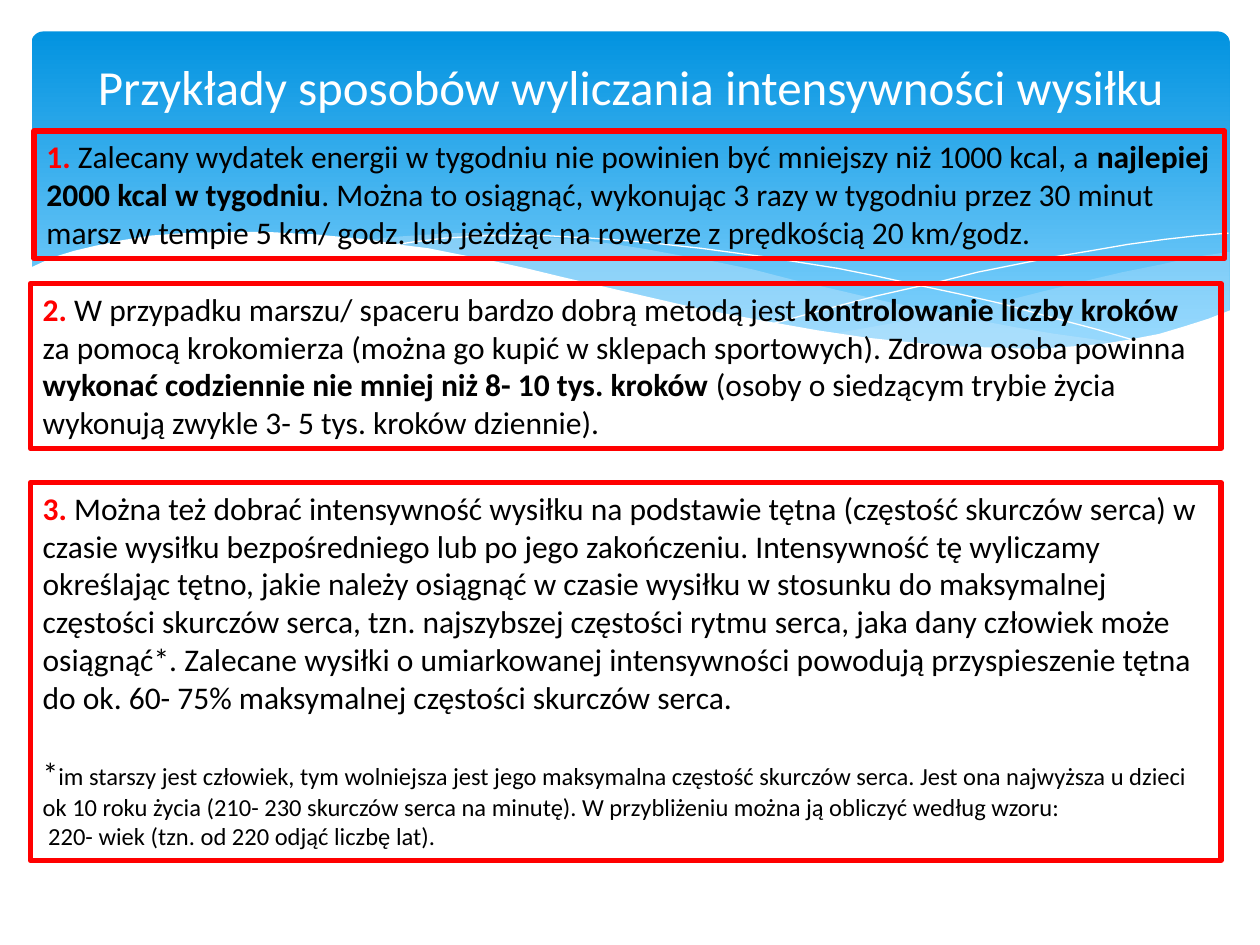
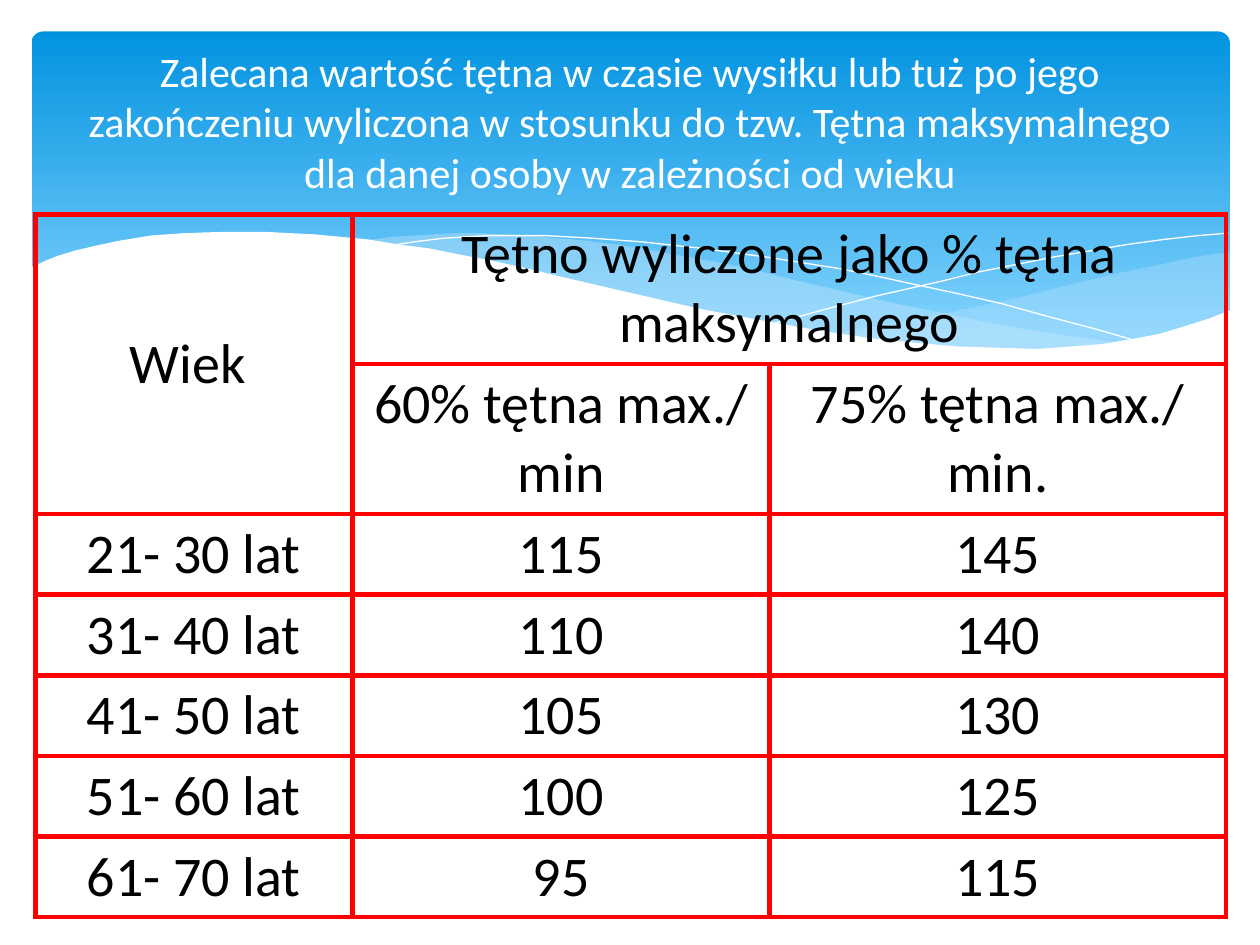
from lxml import etree
from pptx import Presentation
from pptx.dml.color import RGBColor
from pptx.enum.shapes import MSO_SHAPE
from pptx.enum.text import MSO_ANCHOR, PP_ALIGN
from pptx.oxml.ns import qn
from pptx.util import Inches, Pt

ROUND = MSO_SHAPE.ROUNDED_RECTANGLE
MIDDLE = MSO_ANCHOR.MIDDLE
CENTER = PP_ALIGN.CENTER
BLUE = RGBColor(0x02, 0x93, 0xE0)
SKY = RGBColor(0x83, 0xD3, 0xFE)
PALE = RGBColor(0xC6, 0xE7, 0xFC)
WHITE = RGBColor(0xFF, 0xFF, 0xFF)
BLACK = RGBColor(0, 0, 0)
RED = RGBColor(0xFF, 0, 0)
FONT = "Calibri"
BORDER = Pt(3)
EDGE = 0.28    # left edge of the content
WIDE = 9.45    # width of the content

# Wave outlines, in hundredths of an inch
SWELL = [
    (975, 200), (948, 204), (921, 210), (891, 216), (861, 223), (805, 237),
    (753, 248), (706, 257), (661, 265), (691, 269), (719, 272), (745, 275),
    (781, 277), (814, 278), (844, 277), (872, 274), (897, 270), (921, 265),
    (942, 259), (963, 252), (976, 247), (976, 200)]
RIPPLE = [
    (893, 273), (866, 269), (837, 265), (807, 260), (775, 254), (741, 247),
    (706, 240), (668, 231), (629, 222), (598, 214), (569, 208), (541, 203),
    (514, 198), (489, 194), (465, 191), (442, 189), (420, 187), (399, 186),
    (380, 185), (361, 185), (344, 186), (313, 188), (286, 191), (323, 196),
    (362, 203), (404, 211), (449, 222), (491, 232), (530, 240), (566, 248),
    (601, 255), (634, 261), (665, 266), (695, 270), (722, 274), (748, 276),
    (773, 277), (796, 278), (828, 278), (857, 277), (876, 275)]
FALL = [
    (309, 195), (328, 192), (353, 189), (387, 187), (433, 187), (469, 189),
    (510, 192), (556, 197), (608, 204), (665, 213), (695, 219), (727, 226),
    (760, 233), (795, 241), (831, 251), (869, 261), (907, 272)]
RISE = [
    (613, 257), (653, 246), (695, 235), (748, 223), (776, 216), (806, 210),
    (836, 204), (866, 199), (895, 194), (924, 190), (951, 187), (975, 185)]
SHORE = [
    (977, 246), (959, 253), (940, 259), (920, 265), (899, 269), (875, 273),
    (850, 275), (823, 277), (793, 276), (761, 275), (726, 272), (688, 268),
    (648, 262), (603, 254), (555, 245), (503, 233), (447, 220), (418, 213),
    (391, 207), (365, 202), (340, 197), (316, 194), (292, 190), (271, 188),
    (250, 186), (230, 185), (211, 184), (177, 184), (146, 185), (119, 187),
    (95, 191), (76, 195), (59, 199), (46, 203), (36, 207), (23, 213),
    (23, 329), (977, 329)]
WAVES = [(SWELL, PALE, 29), (RIPPLE, PALE, 40), (FALL, None, 100),
         (RISE, None, 100), (SHORE, WHITE, 100)]

TITLES = [
    ("Przykłady sposobów wyliczania intensywności wysiłku", 28,
     (EDGE, 0.37, WIDE, 0.62)),
    ("Zalecana wartość tętna w czasie wysiłku lub tuż po jego zakończeniu "
     "wyliczona w stosunku do tzw. Tętna maksymalnego dla danej osoby "
     "w zależności od wieku", 24, (0.5, 0.37, 9, 1.18)),
]

# Each box: place, then runs of text; every second run is bold
TIPS = [
    ((0.27, 1.04, WIDE, 1.01), [
        "1. ",
        "Zalecany wydatek energii w tygodniu nie powinien być mniejszy niż "
        "1000 kcal, a ",
        "najlepiej 2000 kcal w tygodniu",
        ". Można to osiągnąć, wykonując 3 razy w tygodniu przez 30 minut "
        "marsz w tempie 5 km/ godz. lub jeżdżąc na rowerze z prędkością "
        "20 km/godz."]),
    ((0.24, 2.25, WIDE, 1.31), [
        "2. ",
        "W przypadku marszu/ spaceru bardzo dobrą metodą jest ",
        "kontrolowanie liczby kroków",
        " za pomocą krokomierza (można go kupić w sklepach sportowych). "
        "Zdrowa osoba powinna ",
        "wykonać codziennie nie mniej niż 8- 10 tys. kroków ",
        "(osoby o siedzącym trybie życia wykonują zwykle 3- 5 tys. kroków "
        "dziennie)."]),
    ((0.24, 3.83, WIDE, 3), [
        "3. ",
        "Można też dobrać intensywność wysiłku na podstawie tętna (częstość "
        "skurczów serca) w czasie wysiłku bezpośredniego lub po jego "
        "zakończeniu. Intensywność tę wyliczamy określając tętno, jakie "
        "należy osiągnąć w czasie wysiłku w stosunku do maksymalnej "
        "częstości skurczów serca, tzn. najszybszej częstości rytmu serca, "
        "jaka dany człowiek może osiągnąć*. Zalecane wysiłki o umiarkowanej "
        "intensywności powodują przyspieszenie tętna do ok. 60- 75% "
        "maksymalnej częstości skurczów serca."]),
]
NOTE = ("im starszy jest człowiek, tym wolniejsza jest jego maksymalna "
        "częstość skurczów serca. Jest ona najwyższa u dzieci ok 10 roku "
        "życia (210- 230 skurczów serca na minutę). W przybliżeniu można ją "
        "obliczyć według wzoru:")
RULE = " 220- wiek (tzn. od 220 odjąć liczbę lat)."

PULSE = [
    ("Wiek ", "Tętno wyliczone jako % tętna maksymalnego", ""),
    ("", "60% tętna max./ min", "75% tętna max./ min."),
    ("21- 30 lat", "115", "145"),
    ("31- 40 lat", "110", "140"),
    ("41- 50 lat", "105", "130"),
    ("51- 60 lat", "100", "125"),
    ("61- 70 lat", "95", "115"),
]
COLS = [2.52, 3.31, 3.62]
ROWS = [1.19] * 2 + [0.64] * 5


def frame(slide, place):
    """Add an empty wrapping text box and return it."""
    box = slide.shapes.add_textbox(*map(Inches, place))
    box.text_frame.word_wrap = True
    return box


def style(font, size, color=BLACK):
    font.name = FONT
    font.size = Pt(size)
    font.color.rgb = color


deck = Presentation()
deck.slide_width = Inches(10)
deck.slide_height = Inches(7.5)
blank = deck.slide_layouts[6]

# Shared band, waves and title
for title, size, place in TITLES:
    slide = deck.slides.add_slide(blank)
    band = slide.shapes.add_shape(
        ROUND, *map(Inches, (0.25, 0.25, 9.51, 2.7)))
    band.adjustments[0] = 0.034
    band.shadow.inherit = False
    band.line.fill.background()
    band.fill.gradient()
    band.fill.gradient_angle = 270
    for stop, color, spot in zip(band.fill.gradient_stops,
                                 (BLUE, SKY), (0, 0.9)):
        stop.color.rgb = color
        stop.position = spot

    for points, color, alpha in WAVES:
        pen = slide.shapes.build_freeform(*points[0], scale=Inches(0.01))
        pen.add_line_segments(points[1:], close=color is not None)
        wave = pen.convert_to_shape()
        wave.shadow.inherit = False
        if color is None:
            wave.fill.background()
            wave.line.color.rgb = WHITE
            wave.line.width = 0
            continue
        wave.line.fill.background()
        wave.fill.solid()
        wave.fill.fore_color.rgb = color
        if alpha < 100:
            tint = wave.element.find(".//" + qn("a:srgbClr"))
            etree.SubElement(tint, qn("a:alpha"), val=str(alpha * 1000))

    text = frame(slide, place).text_frame
    text.vertical_anchor = MIDDLE
    head = text.paragraphs[0]
    head.text = title
    head.alignment = CENTER
    style(head.font, size, WHITE)

# Slide 1: three framed tips, the last with a footnote
first, second = deck.slides
for place, parts in TIPS:
    box = frame(first, place)
    box.line.color.rgb = RED
    box.line.width = BORDER
    para = box.text_frame.paragraphs[0]
    for i, part in enumerate(parts):
        run = para.add_run()
        run.text = part
        run.font.bold = i % 2 == 0
        style(run.font, 18, BLACK if i else RED)

note = box.text_frame.add_paragraph()
note.space_before = Pt(22)
for part, size in (("*", 18), (NOTE, 14)):
    run = note.add_run()
    run.text = part
    style(run.font, size)
rule = box.text_frame.add_paragraph()
rule.text = RULE
style(rule.font, 14)

# Slide 2: pulse by age
table = second.shapes.add_table(
    len(ROWS), len(COLS),
    *map(Inches, (EDGE, 1.7, WIDE, sum(ROWS)))).table
table.first_row = table.horz_banding = False
for col, width in zip(table.columns, COLS):
    col.width = Inches(width)
for row, height, words in zip(table.rows, ROWS, PULSE):
    row.height = Inches(height)
    for cell, word in zip(row.cells, words):
        for side in ("a:lnL", "a:lnR", "a:lnT", "a:lnB"):
            line = etree.SubElement(cell._tc.get_or_add_tcPr(), qn(side),
                                    w=str(BORDER))
            fill = etree.SubElement(line, qn("a:solidFill"))
            etree.SubElement(fill, qn("a:srgbClr"), val=str(RED))
        cell.fill.background()
        para = cell.text_frame.paragraphs[0]
        para.text = word
        para.alignment = CENTER
        style(para.font, 32)
table.cell(0, 0).merge(table.cell(1, 0))
table.cell(0, 1).merge(table.cell(0, 2))
table.cell(0, 0).vertical_anchor = MIDDLE

deck.save("out.pptx")
